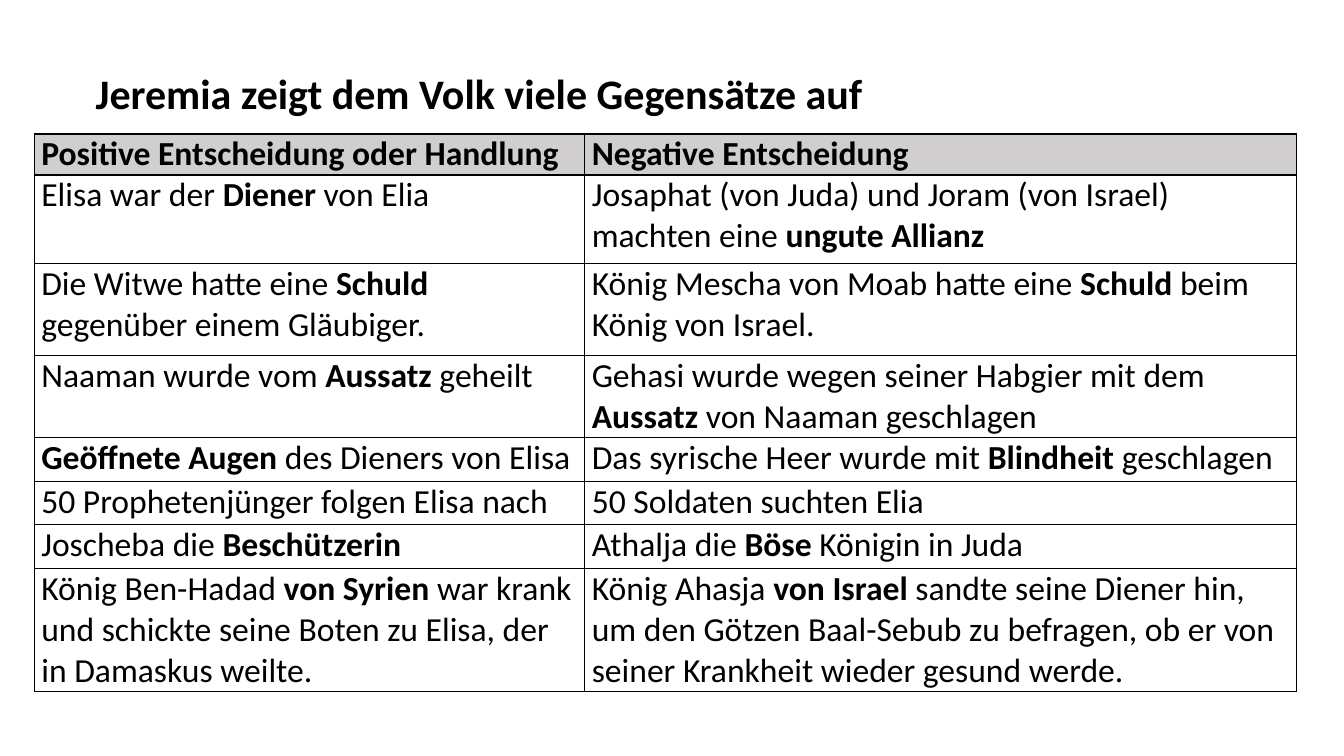
from lxml.etree import SubElement
from pptx import Presentation
from pptx.dml.color import RGBColor
from pptx.enum.text import MSO_AUTO_SIZE
from pptx.oxml.ns import qn
from pptx.util import Pt

PX = 9144  # 100 px to the inch
FONT = "Calibri"
BLACK = RGBColor(0x00, 0x00, 0x00)
HEADER_GREY = RGBColor(0xD0, 0xCE, 0xCE)

TITLE = "Jeremia zeigt dem Volk viele Gegensätze auf"
COLUMN_WIDTHS = [546, 706]
# Height in px, then one text per column; asterisks enclose bold words.
ROWS = [
    (34, "*Positive Entscheidung oder Handlung*", "*Negative Entscheidung*"),
    (88, "Elisa war der *Diener* von Elia",
     "Josaphat (von Juda) und Joram (von Israel) machten eine *ungute Allianz*"),
    (91, "Die Witwe hatte eine *Schuld* gegenüber einem Gläubiger.",
     "König Mescha von Moab hatte eine *Schuld* beim König von Israel."),
    (68, "Naaman wurde vom *Aussatz* geheilt",
     "Gehasi wurde wegen seiner Habgier mit dem *Aussatz* von Naaman geschlagen"),
    (44, "*Geöffnete Augen* des Dieners von Elisa",
     "Das syrische Heer wurde mit *Blindheit* geschlagen"),
    (42, "50 Prophetenjünger folgen Elisa nach", "50 Soldaten suchten Elia"),
    (44, "Joscheba die *Beschützerin*", "Athalja die *Böse* Königin in Juda"),
    (102, "König Ben-Hadad *von Syrien *war krank und schickte seine Boten "
          "zu Elisa, der in Damaskus weilte.",
     "König Ahasja *von Israel *sandte seine Diener hin, um den Götzen "
     "Baal-Sebub zu befragen, ob er von seiner Krankheit wieder gesund werde."),
]


def add_runs(paragraph, marked_text, size):
    """Add runs, with the words between asterisks in bold."""
    for index, text in enumerate(marked_text.split("*")):
        if text:
            run = paragraph.add_run()
            run.text = text
            run.font.name = FONT
            run.font.size = Pt(size)
            run.font.bold = index % 2 == 1
            run.font.color.rgb = BLACK


def add_borders(cell):
    properties = cell._tc.get_or_add_tcPr()
    for position, side in enumerate(("a:lnL", "a:lnR", "a:lnT", "a:lnB")):
        line = SubElement(properties, qn(side), w=str(Pt(1)))
        fill = SubElement(line, qn("a:solidFill"))
        SubElement(fill, qn("a:srgbClr"), val=str(BLACK))
        properties.insert(position, line)


def add_title(slide, left, top, width, height):
    box = slide.shapes.add_textbox(left * PX, top * PX, width * PX, height * PX)
    frame = box.text_frame
    frame.word_wrap = True
    frame.auto_size = MSO_AUTO_SIZE.SHAPE_TO_FIT_TEXT
    paragraph = frame.paragraphs[0]
    paragraph.line_spacing = 1.07
    paragraph.space_before = Pt(12)
    add_runs(paragraph, f"*{TITLE}*", 30)


def add_contrast_table(slide, left, top, width, height):
    table = slide.shapes.add_table(
        len(ROWS), len(COLUMN_WIDTHS),
        left * PX, top * PX, width * PX, height * PX).table
    table.horz_banding = False
    table.first_row = False
    for column, column_width in zip(table.columns, COLUMN_WIDTHS):
        column.width = column_width * PX
    for row_index, (row_height, *texts) in enumerate(ROWS):
        row = table.rows[row_index]
        row.height = row_height * PX
        for cell, text in zip(row.cells, texts):
            cell.margin_left = cell.margin_right = 7 * PX
            cell.margin_top = cell.margin_bottom = 0
            if row_index == 0:
                cell.fill.solid()
                cell.fill.fore_color.rgb = HEADER_GREY
            else:
                cell.fill.background()
            add_borders(cell)
            add_runs(cell.text_frame.paragraphs[0], text, 24)


def main():
    presentation = Presentation()
    presentation.slide_width = 1333 * PX
    presentation.slide_height = 750 * PX
    slide = presentation.slides.add_slide(presentation.slide_layouts[6])
    add_contrast_table(slide, 34, 133, sum(COLUMN_WIDTHS), sum(row[0] for row in ROWS))
    add_title(slide, 85, 59, 1105, 62)
    presentation.save("out.pptx")


if __name__ == "__main__":
    main()
